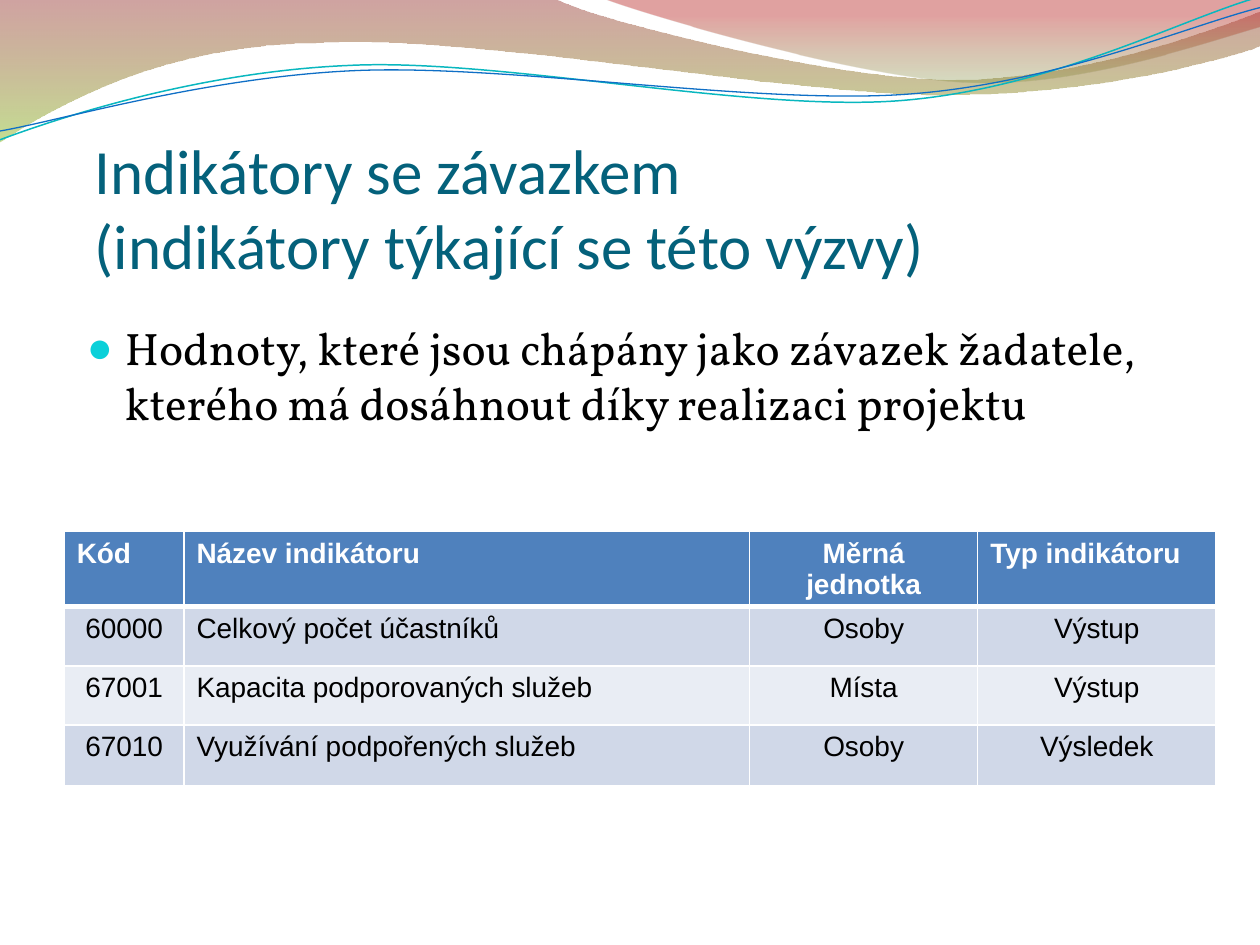
from copy import deepcopy
from math import cos, radians, sin

from pptx import Presentation
from pptx.dml.color import RGBColor
from pptx.enum.text import MSO_ANCHOR, MSO_AUTO_SIZE, PP_ALIGN
from pptx.oxml import parse_xml
from pptx.oxml.ns import nsdecls, qn
from pptx.util import Inches, Pt

COLORS = {
    "white": "FFFFFF", "black": "000000", "title": "04617B", "bullet": "0BD0D9",
    "teal": "09B7BF", "blue": "0F6FC6", "red": "973330", "lime": "95C238",
    "olive": "769537", "crimson": "BE3330",
    "header": "4F81BD", "band_dark": "D0D8E8", "band_light": "E9EDF4",
}

# Each wave is a start point and pieces: (x, y) for a line, six numbers for a cubic curve.
LEFT_BAND = [
    (0, 0), (4.4, -0.01), (4.76, 0.17, 6.64, 0.63, 7.58, 0.63),
    (8.53, 0.63, 9.58, 0.26, 10, 0.09), (10.01, 0.36),
    (9.83, 0.44, 8.7, 0.76, 7.46, 0.75), (6.22, 0.75, 3.82, 0.28, 2.57, 0.34),
    (1.29, 0.35, 0.46, 0.83, -0.01, 1.13), (0, 0),
]
RIGHT_BAND = [
    (4.79, -0.01), (5.09, 0.11, 6.82, 0.62, 7.69, 0.65),
    (8.56, 0.69, 9.61, 0.32, 10, 0.21), (10, 0), (4.79, -0.01),
]
TEAL_WAVE = [
    (0, 1.11), (0.48, 0.93, 1.58, 0.57, 2.77, 0.52),
    (3.95, 0.46, 5.93, 0.89, 7.13, 0.8), (8.33, 0.71, 9.38, 0.15, 9.98, -0.02),
]
BLUE_WAVE = [
    (0, 1.04), (0.47, 0.96, 1.64, 0.61, 2.83, 0.56),
    (4.03, 0.51, 5.97, 0.83, 7.17, 0.75), (8.36, 0.67, 9.41, 0.21, 10, 0.06),
]
WAVE_ROTATION = -2.7

TABLE_ROWS = [
    ("Kód", "Název indikátoru", "Měrná jednotka", "Typ indikátoru"),
    ("60000", "Celkový počet účastníků", "Osoby", "Výstup"),
    ("67001", "Kapacita podporovaných služeb", "Místa", "Výstup"),
    ("67010", "Využívání podpořených služeb", "Osoby", "Výsledek"),
]
COLUMN_WIDTHS = [0.95, 4.49, 1.81, 1.89]
ROW_HEIGHTS = [0.58, 0.47, 0.47, 0.48]


def color(name):
    return RGBColor.from_string(COLORS[name])


def write_text(paragraph, text, *, size, font, fill, bold=False, align=PP_ALIGN.LEFT):
    paragraph.text = text
    paragraph.alignment = align
    paragraph.space_before = Pt(0)
    for run in paragraph.runs:
        run.font.size = Pt(size)
        run.font.name = font
        run.font.bold = bold
        run.font.color.rgb = color(fill)
    for line_break in paragraph._p.findall(qn("a:br")):
        line_break.append(deepcopy(paragraph.runs[0]._r.rPr))


def add_outline(slide, pieces, box, close, rotation=0):
    """Add a curved outline whose pieces show on the slide after the box is rotated."""
    left, top, width, height = box
    builder = slide.shapes.build_freeform(Inches(left), Inches(top))
    builder.add_line_segments([(Inches(left + width), Inches(top + height))], close=close)
    shape = builder.convert_to_shape()
    shape.rotation = rotation
    shape.shadow.inherit = False
    shape.fill.background()

    cosine, sine = cos(radians(rotation)), sin(radians(rotation))

    def point_xml(x, y):
        x, y = x - left - width / 2, y - top - height / 2
        local_x = x * cosine + y * sine + width / 2
        local_y = y * cosine - x * sine + height / 2
        return f'<a:pt x="{Inches(local_x)}" y="{Inches(local_y)}"/>'

    outline = shape._element.spPr.find(f'.//{qn("a:pathLst")}')[0]
    for command in list(outline):
        outline.remove(command)
    for index, piece in enumerate(pieces):
        tag = "moveTo" if index == 0 else "lnTo" if len(piece) == 2 else "cubicBezTo"
        points = "".join(point_xml(x, y) for x, y in zip(piece[::2], piece[1::2]))
        outline.append(parse_xml(f'<a:{tag} {nsdecls("a")}>{points}</a:{tag}>'))
    if close:
        outline.append(parse_xml(f'<a:close {nsdecls("a")}/>'))
    return shape


def add_band(slide, pieces, box, stops, angle):
    """Add a closed wave filled with (position, color, opacity) gradient stops."""
    shape = add_outline(slide, pieces, box, close=True)
    shape.line.fill.background()
    stop_xml = "".join(
        f'<a:gs pos="{position * 1000}"><a:srgbClr val="{COLORS[name]}">'
        f'<a:alpha val="{opacity * 1000}"/></a:srgbClr></a:gs>'
        for position, name, opacity in stops
    )
    gradient = parse_xml(
        f'<a:gradFill {nsdecls("a")} rotWithShape="1"><a:gsLst>{stop_xml}</a:gsLst>'
        f'<a:lin ang="{angle * 60000}" scaled="0"/></a:gradFill>'
    )
    properties = shape._element.spPr
    properties.replace(properties.find(qn("a:noFill")), gradient)
    return shape


def add_wave_line(slide, pieces, box, name, width):
    shape = add_outline(slide, pieces, box, close=False, rotation=WAVE_ROTATION)
    shape.line.color.rgb = color(name)
    shape.line.width = Pt(width)
    return shape


def add_waves(slide):
    waves = [
        add_band(slide, LEFT_BAND, (-0.01, -0.01, 10.02, 1.14),
                 [(0, "red", 45), (100, "lime", 55)], 90),
        add_band(slide, RIGHT_BAND, (4.79, -0.01, 5.21, 0.7),
                 [(0, "olive", 30), (80, "crimson", 45)], 270),
        add_wave_line(slide, TEAL_WAVE, (-0.02, 0.22, 10.02, 0.71), "teal", 0.85),
        add_wave_line(slide, BLUE_WAVE, (-0.02, 0.3, 10.03, 0.58), "blue", 0.75),
    ]
    # Send the waves behind the placeholders.
    for position, shape in enumerate(waves, start=2):
        slide.shapes._spTree.insert(position, shape._element)


def place(shape, left, top, width, height, anchor, side_inset):
    shape.left, shape.top = Inches(left), Inches(top)
    shape.width, shape.height = Inches(width), Inches(height)
    frame = shape.text_frame
    frame.word_wrap = True
    frame.auto_size = MSO_AUTO_SIZE.NONE
    frame.vertical_anchor = anchor
    frame.margin_left = frame.margin_right = Inches(side_inset)
    return frame


def add_bullet(paragraph, indent):
    properties = paragraph._p.get_or_add_pPr()
    properties.set("marL", str(Inches(indent)))
    properties.set("indent", str(-Inches(indent)))
    for tag in (f'buClr {nsdecls("a")}><a:srgbClr val="{COLORS["bullet"]}"/></a:buClr',
                f'buSzPct {nsdecls("a")} val="95000"/',
                f'buChar {nsdecls("a")} char="●"/'):
        properties.append(parse_xml(f"<a:{tag}>"))


def set_borders(cell, **widths):
    """Draw white borders; widths in points by side: L, R, T, B."""
    properties = cell._tc.get_or_add_tcPr()
    for side, width in widths.items():
        properties.append(parse_xml(
            f'<a:ln{side} {nsdecls("a")} w="{Pt(width)}"><a:solidFill>'
            f'<a:srgbClr val="{COLORS["white"]}"/></a:solidFill></a:ln{side}>'
        ))


def add_indicator_table(slide):
    table = slide.shapes.add_table(
        len(TABLE_ROWS), len(COLUMN_WIDTHS), Inches(0.51), Inches(4.22),
        Inches(sum(COLUMN_WIDTHS)), Inches(sum(ROW_HEIGHTS)),
    ).table
    for column, width in zip(table.columns, COLUMN_WIDTHS):
        column.width = Inches(width)
    for row, height in zip(table.rows, ROW_HEIGHTS):
        row.height = Inches(height)
    for row_index, texts in enumerate(TABLE_ROWS):
        is_header = row_index == 0
        band = "header" if is_header else ("band_light", "band_dark")[row_index % 2]
        for column_index, text in enumerate(texts):
            cell = table.cell(row_index, column_index)
            set_borders(cell, L=1, R=1, T=3 if row_index == 1 else 1, B=3 if is_header else 1)
            cell.fill.solid()
            cell.fill.fore_color.rgb = color(band)
            centered = column_index == 2 or (not is_header and column_index != 1)
            write_text(
                cell.text_frame.paragraphs[0], text, size=16, font="Arial",
                fill="white" if is_header else "black", bold=is_header,
                align=PP_ALIGN.CENTER if centered else PP_ALIGN.LEFT,
            )


def main():
    presentation = Presentation()
    presentation.slide_width, presentation.slide_height = Inches(10), Inches(7.5)
    slide = presentation.slides.add_slide(presentation.slide_layouts[1])
    add_waves(slide)

    title = place(slide.shapes.title, 0.75, 0.99, 9, 1.25, MSO_ANCHOR.BOTTOM, 0)
    title.margin_bottom = 0
    write_text(title.paragraphs[0], "Indikátory se závazkem \v(indikátory týkající se této výzvy)",
               size=36, font="Calibri", fill="title")

    body = place(slide.placeholders[1], 0.59, 2.49, 9, 4.8, MSO_ANCHOR.TOP, 0.1)
    add_bullet(body.paragraphs[0], 0.3)
    write_text(body.paragraphs[0],
               "Hodnoty, které jsou chápány jako závazek žadatele, "
               "kterého má dosáhnout díky realizaci projektu",
               size=26, font="Vollkorn", fill="black")

    add_indicator_table(slide)
    presentation.save("out.pptx")


if __name__ == "__main__":
    main()
